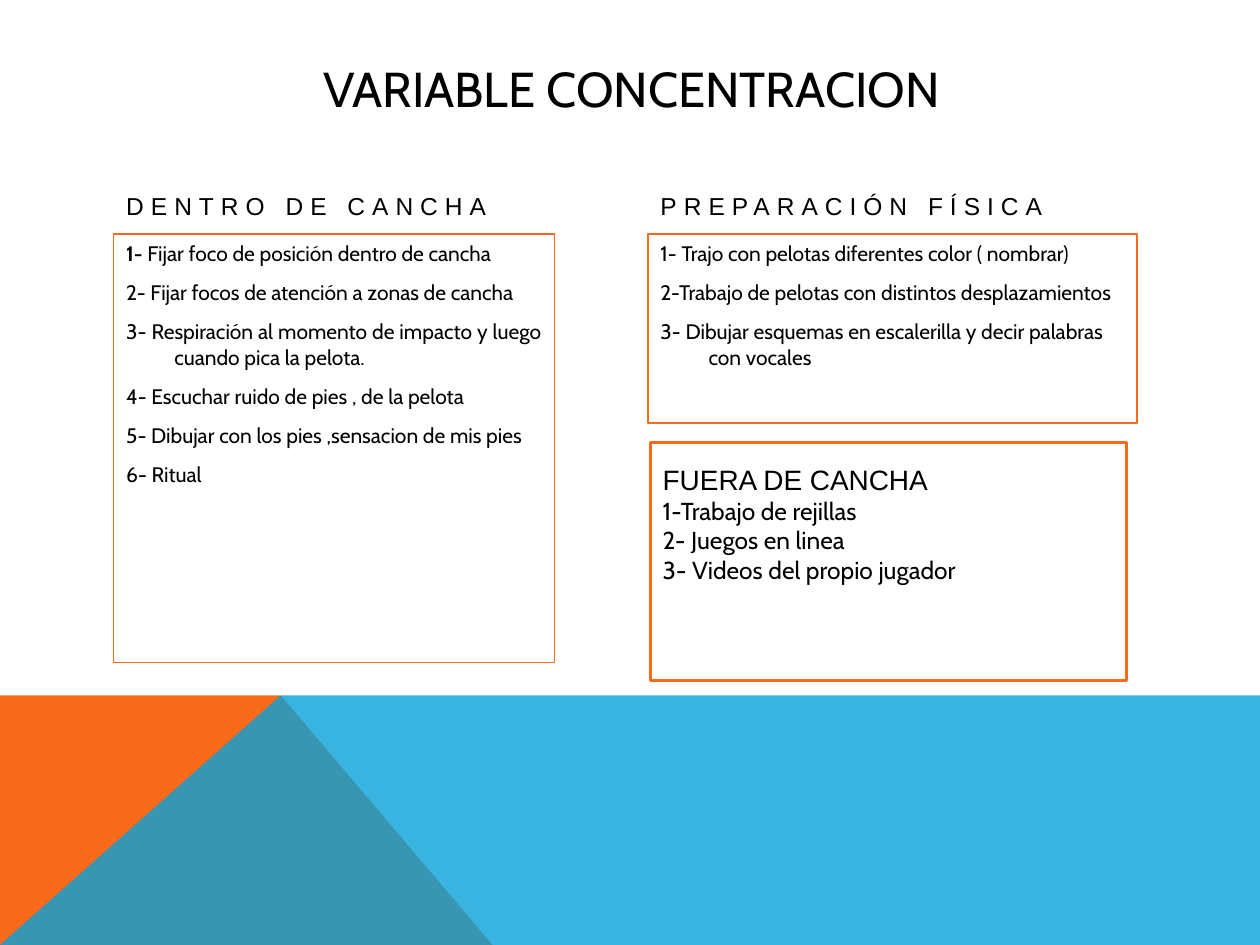
from dataclasses import dataclass

from lxml import etree
from pptx import Presentation
from pptx import util as u
from pptx.dml.color import RGBColor
from pptx.enum import text
from pptx.oxml import ns


@dataclass(frozen=True)
class Theme:
    ink: RGBColor = RGBColor(0x00, 0x00, 0x00)
    paper: RGBColor = RGBColor(0xFF, 0xFF, 0xFF)
    orange: RGBColor = RGBColor(0xF9, 0x6A, 0x1B)
    blue: RGBColor = RGBColor(0x08, 0xA1, 0xD9)
    body_font: str = "Cabin"
    head_font: str = "Arial"
    title_size: int = 28
    box_head_size: int = 16
    head_size: int = 14
    list_size: int = 12


THEME = Theme()
WIDTH, HEIGHT = 25.4, 19.05
LEFT, RIGHT = 2.29, 13.06
HEAD_TOP, LIST_TOP, BAND_TOP = 3.05, 4.72, 14.02
INDENT = 0.97

INSIDE_COURT = [
    "1- Fijar foco de posición dentro de cancha",
    "2- Fijar focos de atención a zonas de cancha",
    "3- Respiración al momento de impacto y luego cuando pica la pelota.",
    "4- Escuchar ruido de pies , de la pelota",
    "5- Dibujar con los pies ,sensacion de mis pies",
    "6- Ritual",
]
FITNESS = [
    "1- Trajo con pelotas diferentes color ( nombrar)",
    "2-Trabajo de pelotas con distintos desplazamientos",
    "3- Dibujar esquemas en escalerilla y decir palabras con vocales",
]
OUTSIDE_COURT = [
    "1-Trabajo de rejillas",
    "2- Juegos en linea",
    "3- Videos del propio jugador",
]


def apply(target, **values):
    for name, value in values.items():
        setattr(target, name, value)


def place(box, left, top, width, height):
    apply(box, left=u.Cm(left), top=u.Cm(top), width=u.Cm(width), height=u.Cm(height))


def set_frame(box, anchor):
    apply(box.text_frame, word_wrap=True, auto_size=text.MSO_AUTO_SIZE.NONE,
          vertical_anchor=anchor)


def add_span(para, words, font, size, bold=False):
    span = para.add_run()
    span.text = words
    apply(span.font, name=font, size=u.Pt(size), bold=bold)
    span.font.color.rgb = THEME.ink
    return span


def next_para(frame, index):
    return frame.add_paragraph() if index else frame.paragraphs[0]


def outline(box, points, fill=None):
    box.line.color.rgb = THEME.orange
    box.line.width = u.Pt(points)
    if fill is not None:
        box.fill.solid()
        box.fill.fore_color.rgb = fill


def add_band(page, points, color, alpha=100):
    """Decorative polygon at the foot of the page, behind everything else."""
    corners = [(u.Cm(x), u.Cm(y)) for x, y in points]
    builder = page.shapes.build_freeform(*corners[0])
    builder.add_line_segments(corners[1:], close=True)
    band = builder.convert_to_shape()
    band.shadow.inherit = False
    band.fill.solid()
    band.fill.fore_color.rgb = color
    band.line.fill.background()
    if alpha < 100:
        tint = band.fill._xPr.find(".//" + ns.qn("a:srgbClr"))
        etree.SubElement(tint, ns.qn("a:alpha"), val=str(alpha * 1000))
    return band


def fill_title(box, words):
    place(box, LEFT, 1.02, 20.88, 1.52)
    set_frame(box, text.MSO_ANCHOR.MIDDLE)
    para = box.text_frame.paragraphs[0]
    para.alignment = text.PP_ALIGN.CENTER
    add_span(para, words, THEME.body_font, THEME.title_size)


def fill_heading(box, left, words):
    place(box, left, HEAD_TOP, 8.89, 1.52)
    set_frame(box, text.MSO_ANCHOR.BOTTOM)
    para = box.text_frame.paragraphs[0]
    para.space_before = u.Pt(8)
    span = add_span(para, words, THEME.head_font, THEME.head_size)
    span.font._element.set("spc", "400")


def fill_list(box, left, width, height, items, align, bold_lead=""):
    place(box, left, LIST_TOP, width, height)
    set_frame(box, text.MSO_ANCHOR.TOP)
    for index, item in enumerate(items):
        para = next_para(box.text_frame, index)
        apply(para, alignment=align, space_before=u.Pt(8))
        # Hanging indent without a bullet sign
        props = para._p.get_or_add_pPr()
        props.set("marL", str(u.Cm(INDENT)))
        props.set("indent", str(-u.Cm(INDENT)))
        etree.SubElement(props, ns.qn("a:buNone"))
        if bold_lead and item.startswith(bold_lead):
            add_span(para, bold_lead, THEME.body_font, THEME.list_size, bold=True)
            item = item[len(bold_lead):]
        add_span(para, item, THEME.body_font, THEME.list_size)


def add_framed_box(page, heading, items):
    box = page.shapes.add_textbox(u.Cm(13.11), u.Cm(8.92), u.Cm(9.6), u.Cm(4.8))
    outline(box, 2, THEME.paper)
    set_frame(box, text.MSO_ANCHOR.TOP)
    frame = box.text_frame
    frame.margin_top = u.Cm(0.4)
    add_span(frame.paragraphs[0], heading, THEME.head_font, THEME.box_head_size)
    for item in items:
        add_span(frame.add_paragraph(), item, THEME.body_font, THEME.head_size)


def main():
    deck = Presentation()
    apply(deck, slide_width=u.Cm(WIDTH), slide_height=u.Cm(HEIGHT))
    page = deck.slides.add_slide(deck.slide_layouts[4])
    title, left_head, left_list, right_head, right_list = page.placeholders

    # Coloured foot of the page
    peak = (5.66, BAND_TOP)
    corner = (0, HEIGHT)
    bands = [
        add_band(page, [corner, (0, BAND_TOP), peak, (9.93, HEIGHT)], THEME.orange),
        add_band(page, [corner, peak, (WIDTH, BAND_TOP), (WIDTH, HEIGHT)],
                 THEME.blue, alpha=80),
    ]
    for depth, band in enumerate(bands):
        page.shapes._spTree.insert(2 + depth, band._element)

    # Title and the two columns
    fill_title(title, "VARIABLE CONCENTRACION")
    fill_heading(left_head, LEFT, "DENTRO DE CANCHA")
    fill_list(left_list, LEFT, 8.89, 8.64, INSIDE_COURT,
              text.PP_ALIGN.JUSTIFY, bold_lead="1- ")
    outline(left_list, 0.75)
    fill_heading(right_head, RIGHT, "PREPARACIÓN FÍSICA")
    fill_list(right_list, RIGHT, 9.86, 3.81, FITNESS, text.PP_ALIGN.LEFT)
    outline(right_list, 0.75, THEME.paper)

    # Framed box below the right column
    add_framed_box(page, "FUERA DE CANCHA", OUTSIDE_COURT)

    deck.save("out.pptx")


if __name__ == "__main__":
    main()
